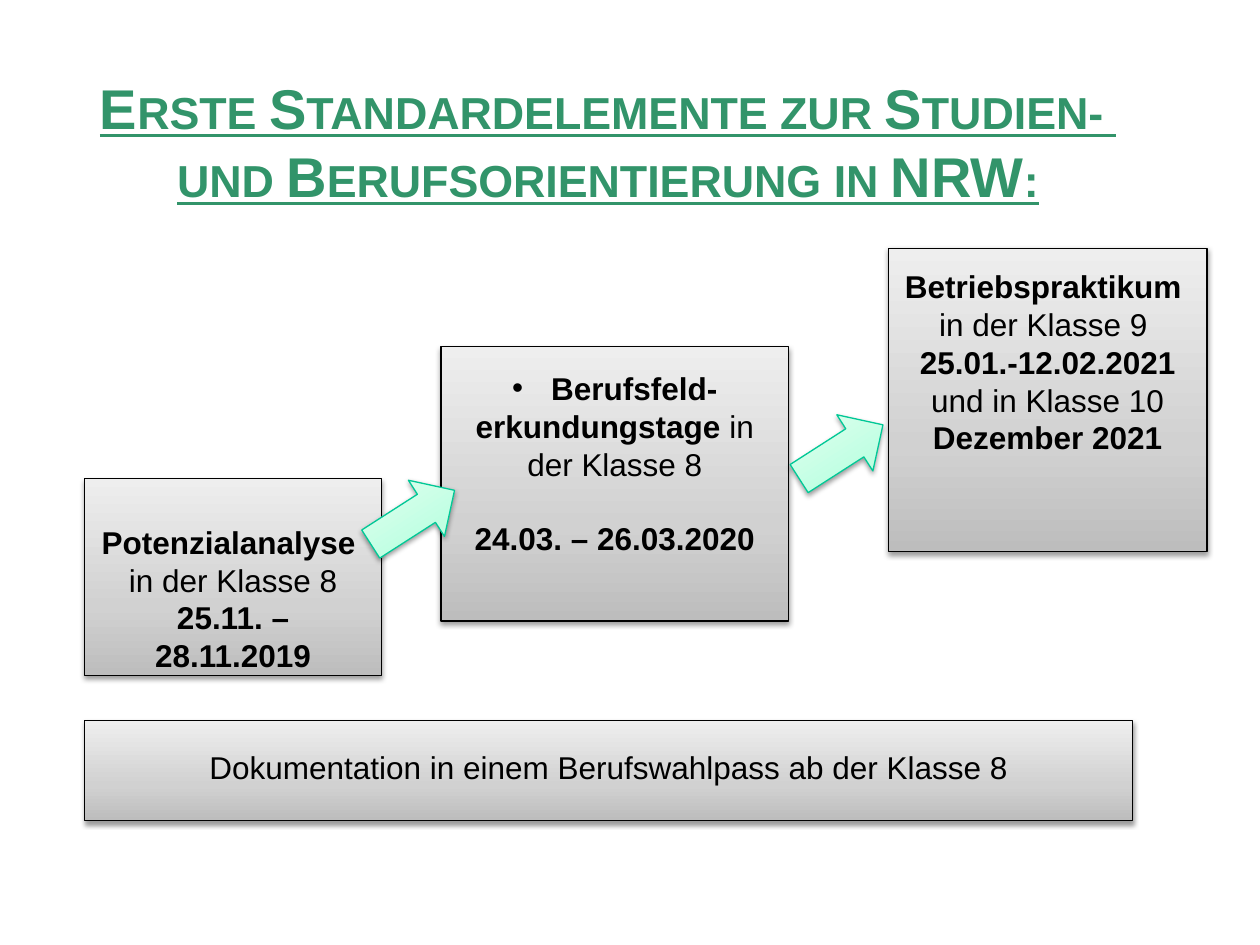
from copy import deepcopy
from dataclasses import dataclass

from lxml.etree import SubElement
from pptx import Presentation
from pptx.dml.color import RGBColor
from pptx.enum.shapes import MSO_SHAPE
from pptx.enum.text import MSO_ANCHOR, MSO_AUTO_SIZE, PP_ALIGN
from pptx.oxml.ns import qn
from pptx.util import Inches, Pt

RECT = MSO_SHAPE.RECTANGLE
ARROW = MSO_SHAPE.RIGHT_ARROW
CENTER = PP_ALIGN.CENTER
TOP = MSO_ANCHOR.TOP
MIDDLE = MSO_ANCHOR.MIDDLE
FIT = MSO_AUTO_SIZE.SHAPE_TO_FIT_TEXT

GRAY = ("BDBDBD", "D1D1D1", "EEEEEE")
MINT = ("A5FFD6", "BFFFE2", "E7FFF3")
STOPS = (0, 0.35, 1)
BODY = {"name": "Arial", "size": Pt(18)}
HEAD = {"name": "Arial", "size": Pt(32), "bold": True, "underline": True}


@dataclass
class Line:
    runs: list[tuple[str, bool]]
    gap: float = 0
    bullet: bool = False


@dataclass
class Box:
    left: float
    top: float
    width: float
    height: float
    inset: float
    lines: list[Line]


def paint(color, code: str) -> None:
    color.rgb = RGBColor.from_string(code)


def write(par, text: str, style: dict, code: str):
    run = par.add_run()
    run.text = text
    for key, value in style.items():
        setattr(run.font, key, value)
    paint(run.font.color, code)
    return run


def shade(shape) -> None:
    shape.shadow.inherit = False
    effect = shape._element.spPr.find(qn("a:effectLst"))
    outer = SubElement(effect, qn("a:outerShdw"), blurRad=str(Pt(3.1)),
                       dist=str(Pt(1.6)), dir="5400000", rotWithShape="0")
    color = SubElement(outer, qn("a:srgbClr"), val="000000")
    SubElement(color, qn("a:alpha"), val="38000")


def draw(slide, kind, place: tuple, tones: tuple, edge: str):
    shape = slide.shapes.add_shape(kind, *map(Inches, place))
    shape.fill.gradient()
    shape.fill.gradient_angle = 90
    stops = shape._element.spPr.find(".//" + qn("a:gsLst"))
    stops.append(deepcopy(stops[0]))
    for stop, spot, tone in zip(shape.fill.gradient_stops, STOPS, tones):
        stop.position = spot
        paint(stop.color, tone)
    paint(shape.line.color, edge)
    shape.line.width = Pt(0.75)
    shade(shape)
    return shape


def mark(par) -> None:
    props = par._p.get_or_add_pPr()
    props.set("marL", str(Inches(0.31)))
    props.set("indent", str(-Inches(0.31)))
    color = SubElement(props, qn("a:buClr"))
    SubElement(color, qn("a:srgbClr"), val="000000")
    SubElement(props, qn("a:buFont"), typeface="Arial")
    SubElement(props, qn("a:buChar"), char="•")


def add_box(slide, box: Box) -> None:
    place = (box.left, box.top, box.width, box.height)
    frame = draw(slide, RECT, place, GRAY, "000000").text_frame
    frame.word_wrap = True
    frame.vertical_anchor = TOP
    frame.margin_top = Inches(box.inset)
    for i, line in enumerate(box.lines):
        par = frame.add_paragraph() if i else frame.paragraphs[0]
        par.alignment = CENTER
        if line.gap:
            par.space_before = Pt(line.gap)
        if line.bullet:
            mark(par)
        for text, bold in line.runs:
            write(par, text, {**BODY, "bold": bold}, "000000")


def add_arrow(slide, left: float, top: float) -> None:
    shape = draw(slide, ARROW, (left, top, 0.79, 0.53), MINT, "00C896")
    shape.rotation = 327.3


def add_title(slide, lines: list[str]) -> None:
    title = slide.shapes.title
    place = {"left": 0.43, "top": 0.53, "width": 8.79, "height": 1.18}
    for key, value in place.items():
        setattr(title, key, Inches(value))
    frame = title.text_frame
    frame.word_wrap = False
    frame.auto_size = FIT
    frame.vertical_anchor = MIDDLE
    for i, text in enumerate(lines):
        par = frame.add_paragraph() if i else frame.paragraphs[0]
        par.alignment = CENTER
        run = write(par, text, HEAD, "32946A")
        run.font._element.set("cap", "small")


BOXES = [
    Box(0.67, 3.8, 2.36, 1.56, 0.35, [
        Line([("Potenzialanalyse ", True)]),
        Line([("in der Klasse 8", False)]),
        Line([("25.11. – 28.11.2019", True)]),
    ]),
    Box(3.5, 2.75, 2.76, 2.18, 0.18, [
        Line([("Berufsfeld-", True)], bullet=True),
        Line([("erkundungstage ", True), ("in der Klasse 8", False)]),
        Line([("24.03. – 26.03.2020", True)], gap=21),
    ]),
    Box(7.05, 1.97, 2.53, 2.41, 0.15, [
        Line([("Betriebspraktikum ", True)]),
        Line([("in der Klasse 9 ", False)]),
        Line([("25.01.-12.02.2021", True)]),
        Line([("und in Klasse 10", False)]),
        Line([("Dezember 2021", True)]),
    ]),
    Box(0.67, 5.72, 8.32, 0.79, 0.22, [
        Line([("Dokumentation in einem Berufswahlpass ab der Klasse 8", False)]),
    ]),
]
ARROWS = [(2.88, 3.84), (6.28, 3.32)]


def main() -> None:
    deck = Presentation()
    deck.slide_width = Inches(10)
    deck.slide_height = Inches(7.5)
    slide = deck.slides.add_slide(deck.slide_layouts[5])
    add_title(slide, ["Erste Standardelemente zur Studien- ",
                      "und Berufsorientierung in NRW:"])
    for box in BOXES:
        add_box(slide, box)
    for left, top in ARROWS:
        add_arrow(slide, left, top)
    deck.save("out.pptx")


if __name__ == "__main__":
    main()
